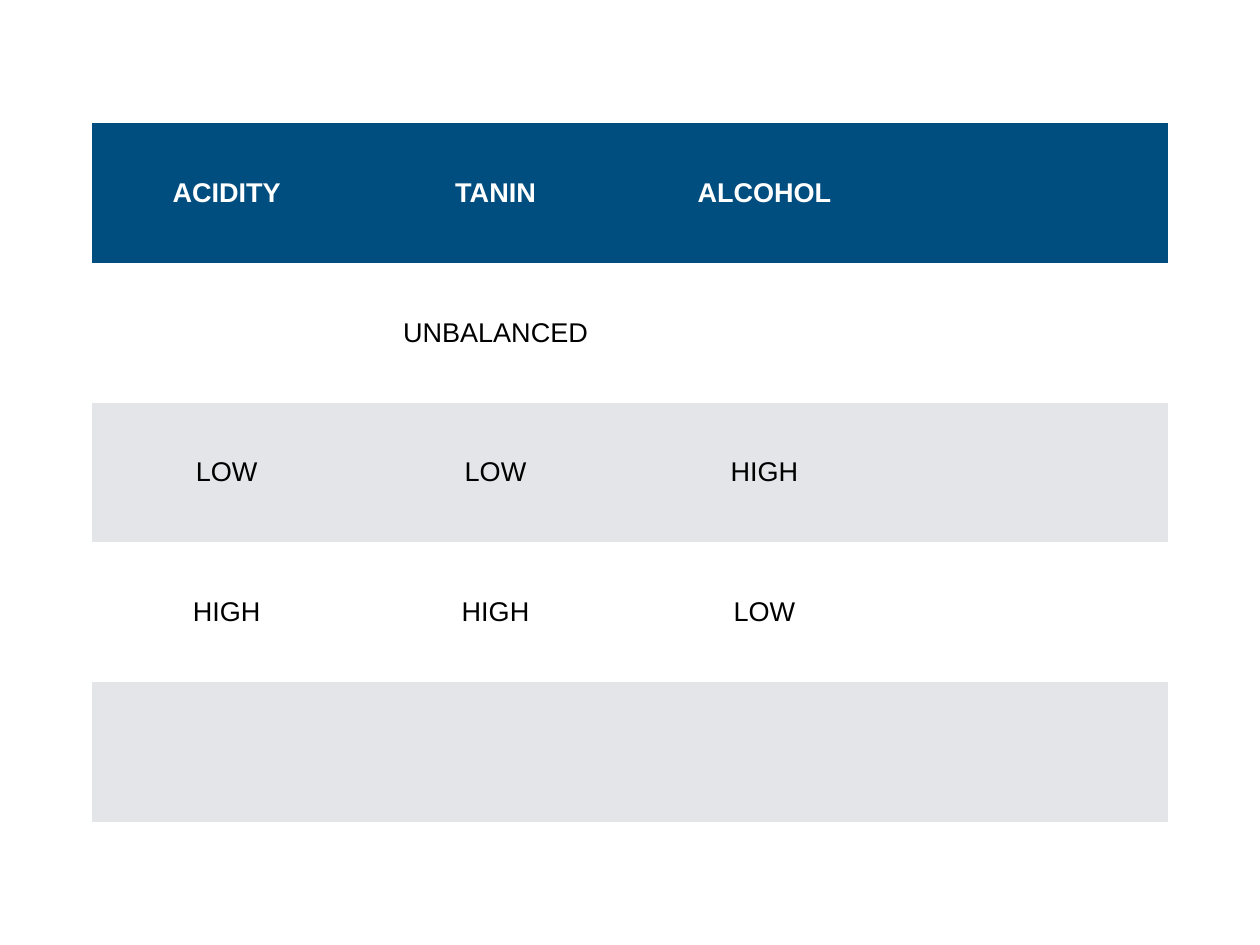
from dataclasses import dataclass

from pptx import Presentation
from pptx.dml.color import RGBColor
from pptx.enum.text import MSO_ANCHOR, PP_ALIGN
from pptx.oxml.ns import qn
from pptx.util import Inches, Pt


@dataclass(frozen=True)
class Theme:
    font: str = "Arial"
    text_size: int = 22
    header_fill: str = "004D80"
    header_text: str = "FFFFFF"
    body_text: str = "000000"
    bands: tuple = ("FFFFFF", "E3E5E8")
    cell_margin: float = 0.06
    plain_table: str = "{2D5ABB26-0587-4C30-8999-92F81FD0307C}"


THEME = Theme()

WINE_BALANCE = [
    ["ACIDITY", "TANIN", "ALCOHOL", ""],
    ["", "UNBALANCED", "", ""],
    ["LOW", "LOW", "HIGH", ""],
    ["HIGH", "HIGH", "LOW", ""],
    ["", "", "", ""],
]


def apply_format(target, values):
    for attribute, value in values.items():
        setattr(target, attribute, value)


def format_cell(cell, label, fill, color, bold):
    margin = Inches(THEME.cell_margin)
    apply_format(cell, {
        "text": label,
        "vertical_anchor": MSO_ANCHOR.MIDDLE,
        "margin_left": margin,
        "margin_right": margin,
        "margin_top": margin,
        "margin_bottom": margin,
    })
    cell.fill.solid()
    cell.fill.fore_color.rgb = RGBColor.from_string(fill)
    paragraph = cell.text_frame.paragraphs[0]
    paragraph.alignment = PP_ALIGN.CENTER
    for font in [paragraph.font] + [run.font for run in paragraph.runs]:
        apply_format(font, {
            "name": THEME.font,
            "size": Pt(THEME.text_size),
            "bold": bold,
        })
        font.color.rgb = RGBColor.from_string(color)


def add_balance_table(slide, left, top, width, height):
    balance = slide.shapes.add_table(
        len(WINE_BALANCE), len(WINE_BALANCE[0]),
        Inches(left), Inches(top), Inches(width), Inches(height),
    ).table
    balance.horz_banding = False
    balance._tbl.tblPr.find(qn("a:tableStyleId")).text = THEME.plain_table
    for row, labels in enumerate(WINE_BALANCE):
        header = row == 0
        fill = THEME.header_fill if header else THEME.bands[(row - 1) % 2]
        color = THEME.header_text if header else THEME.body_text
        for column, label in enumerate(labels):
            format_cell(balance.cell(row, column), label, fill, color, header)


def main():
    deck = Presentation()
    apply_format(deck, {
        "slide_width": Inches(14.22),
        "slide_height": Inches(10.67),
    })
    slide = deck.slides.add_slide(deck.slide_layouts.get_by_name("Blank"))
    add_balance_table(slide, 1.04, 1.39, 12.14, 7.89)
    deck.save("out.pptx")


if __name__ == "__main__":
    main()
